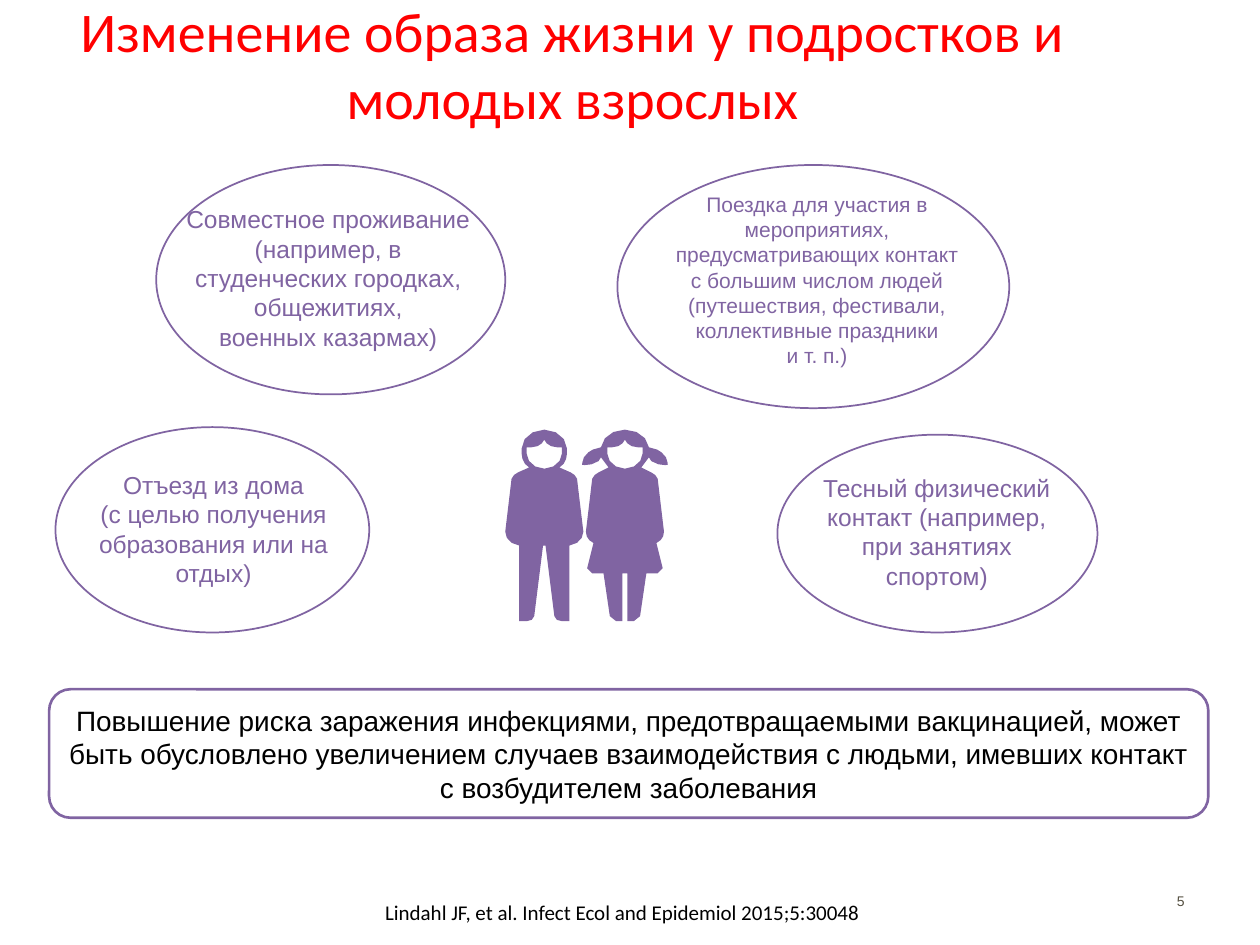
from pptx import Presentation
from pptx.dml.color import RGBColor
from pptx.enum.shapes import MSO_SHAPE as Shape
from pptx.enum.text import MSO_ANCHOR as Anchor, PP_ALIGN as Align
from pptx.util import Inches, Pt

PURPLE = RGBColor(0x80, 0x64, 0xA2)
RED = RGBColor(0xFF, 0x00, 0x00)
BLACK = RGBColor(0x00, 0x00, 0x00)
WHITE = RGBColor(0xFF, 0xFF, 0xFF)
GREY = RGBColor(0x54, 0x4F, 0x40)

# Oval box, text box, text size, lines
LIFESTYLE_CHANGES = [
    ((1.24, 1.31, 2.77, 1.82), (1.43, 1.62, 2.35, 0.88), 14,
     ["Совместное проживание",
      "(например, в студенческих городках, общежитиях,",
      "военных казармах)"]),
    ((0.44, 3.39, 2.49, 1.63), (0.52, 3.73, 2.35, 0.88), 14,
     ["Отъезд из дома", "(с целью получения образования или на отдых)"]),
    ((6.17, 3.45, 2.54, 1.57), (6.51, 3.75, 1.85, 0.88), 14,
     ["Тесный физический контакт (например, при занятиях спортом)"]),
    ((4.9, 1.31, 3.11, 1.93), (5.35, 1.52, 2.27, 0.88), 12,
     ["Поездка для участия в мероприятиях, предусматривающих контакт "
      "с большим числом людей (путешествия, фестивали, коллективные праздники",
      "и т. п.)"]),
]

# Right halves of symmetric outlines, as (x from the axis, y from the top).
# A step of one point is a line, a step of three points is a Bezier curve.
SHOULDER = [[(0.21, 0.34)], [(0.24, 0.36)], [(0.26, 0.39)], [(0.31, 0.81)]]
BOY = [
    [(0, 0)],
    [(0.1, 0), (0.18, 0.07), (0.18, 0.15)],
    [(0.18, 0.19)],
    [(0.18, 0.23), (0.16, 0.28), (0.12, 0.3)],
    *SHOULDER,
    [(0.31, 0.86), (0.27, 0.91), (0.2, 0.92)],
    [(0.2, 1.52)],
    [(0.14, 1.52)],
    [(0.1, 1.51)],
    [(0.08, 1.48)],
    [(0.01, 0.92)],
]
GIRL = [
    [(0, 0)],
    [(0.1, 0), (0.18, 0.06), (0.19, 0.14)],
    [(0.21, 0.15), (0.26, 0.15), (0.29, 0.18)],
    [(0.34, 0.21), (0.34, 0.28), (0.34, 0.28)],
    [(0.34, 0.28), (0.26, 0.29), (0.21, 0.25)],
    [(0.19, 0.22)],
    [(0.13, 0.3)],
    *SHOULDER,
    [(0.31, 0.85), (0.29, 0.88), (0.25, 0.9)],
    [(0.3, 1.1)],
    [(0.26, 1.14)],
    [(0.17, 1.14)],
    [(0.12, 1.48)],
    [(0.07, 1.52)],
    [(0.02, 1.52)],
    [(0.02, 1.14)],
]
FACE = [
    [(0, 0.08)],
    [(0.01, 0.11), (0.05, 0.14), (0.1, 0.14)],
    [(0.14, 0.14)],
    [(0.14, 0.19)],
    [(0.14, 0.25), (0.08, 0.31), (0, 0.31)],
]


def inches(box):
    return [Inches(length) for length in box]


def write(frame, lines, size, color, font="Arial", align=Align.CENTER,
          anchor=Anchor.MIDDLE, inset=None):
    """Fill a text frame with one paragraph, its lines parted by line breaks."""
    frame.word_wrap = True
    frame.vertical_anchor = anchor
    if inset is not None:
        frame.margin_left = frame.margin_right = Inches(inset)
        frame.margin_top = frame.margin_bottom = Inches(inset)
    paragraph = frame.paragraphs[0]
    paragraph.alignment = align
    for index, line in enumerate(lines):
        if index:
            paragraph.add_line_break()
        run = paragraph.add_run()
        run.text = line
        run.font.name = font
        run.font.size = Pt(size)
        run.font.color.rgb = color


def add_text(slide, box, lines, size, color, **style):
    label = slide.shapes.add_textbox(*inches(box))
    write(label.text_frame, lines, size, color, **style)


def add_outlined(slide, preset, box, line_width):
    outlined = slide.shapes.add_shape(preset, *inches(box))
    outlined.shadow.inherit = False
    outlined.fill.solid()
    outlined.fill.fore_color.rgb = WHITE
    outlined.line.color.rgb = PURPLE
    outlined.line.width = Pt(line_width)
    return outlined


def add_lifestyle_change(slide, oval_box, text_box, size, lines):
    add_outlined(slide, Shape.OVAL, oval_box, 1)
    add_text(slide, text_box, lines, size, PURPLE, anchor=Anchor.TOP, inset=0)


def bezier(points, steps=3):
    """Points along a cubic curve, without its start."""
    for step in range(1, steps + 1):
        t = step / steps
        weights = ((1 - t) ** 3, 3 * t * (1 - t) ** 2, 3 * t ** 2 * (1 - t), t ** 3)
        yield tuple(sum(w * point[axis] for w, point in zip(weights, points))
                    for axis in (0, 1))


def mirrored_outline(half, axis_x, top):
    """Flatten a half outline, add its mirror image and move it into place."""
    points = []
    for step in half:
        points += step if len(step) == 1 else bezier([points[-1], *step])
    points += [(-x, y) for x, y in reversed(points) if x]
    return [(Inches(axis_x + x), Inches(top + y)) for x, y in points]


def add_person(slide, half, axis_x, top):
    body = mirrored_outline(half, axis_x, top)
    face = mirrored_outline(FACE, axis_x, top)[::-1]
    builder = slide.shapes.build_freeform(*body[0])
    builder.add_line_segments(body[1:], close=True)
    builder.move_to(*face[0])
    builder.add_line_segments(face[1:], close=True)
    person = builder.convert_to_shape()
    person.shadow.inherit = False
    person.fill.solid()
    person.fill.fore_color.rgb = PURPLE
    person.line.fill.background()


def add_conclusion(slide, box):
    conclusion = add_outlined(slide, Shape.ROUNDED_RECTANGLE, box, 1.5)
    write(conclusion.text_frame,
          ["Повышение риска заражения инфекциями, предотвращаемыми вакцинацией, "
           "может быть обусловлено увеличением случаев взаимодействия с людьми, "
           "имевших контакт с возбудителем заболевания"],
          16, BLACK, inset=0.08)


def main():
    deck = Presentation()
    deck.slide_width, deck.slide_height = Inches(10), Inches(7.5)
    slide = deck.slides.add_slide(deck.slide_layouts[6])

    add_text(slide, (0.4, 0.32, 8.29, 0.37),
             ["Изменение образа жизни у подростков и молодых взрослых"],
             32, RED, font="Calibri")
    add_text(slide, (7.17, 6.95, 2.33, 0.4), ["5"], 8, GREY, align=Align.RIGHT)
    for change in LIFESTYLE_CHANGES:
        add_lifestyle_change(slide, *change)
    add_person(slide, BOY, 4.32, 3.41)
    add_person(slide, GIRL, 4.96, 3.41)
    add_conclusion(slide, (0.39, 5.47, 9.2, 1.02))
    add_text(slide, (0.41, 7.04, 9.06, 0.4),
             ["Lindahl JF, et al. Infect Ecol and Epidemiol 2015;5:30048"],
             12, BLACK, font="Calibri")

    deck.save("out.pptx")


if __name__ == "__main__":
    main()
